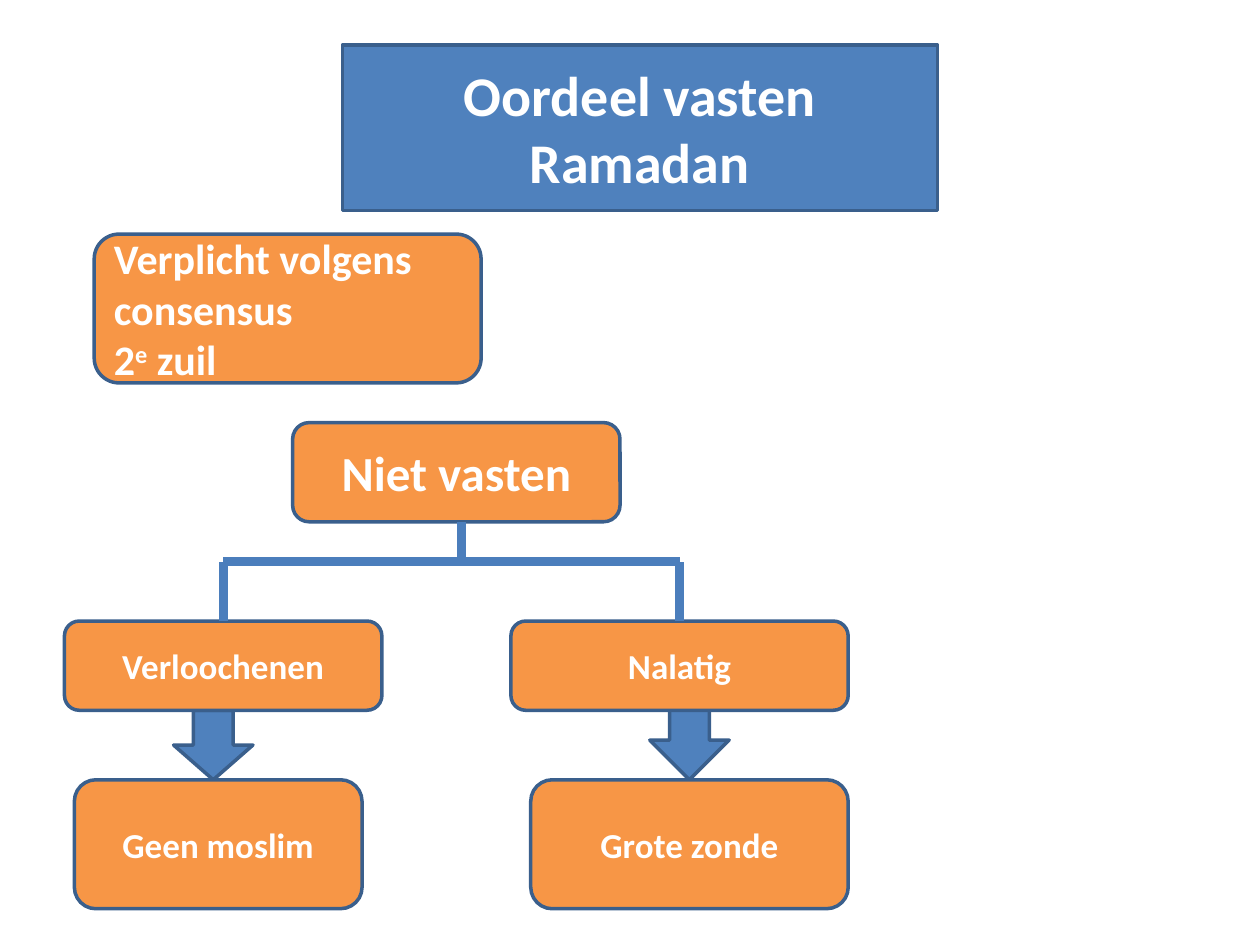
from lxml.etree import SubElement
from pptx import Presentation
from pptx.dml.color import RGBColor
from pptx.enum.shapes import MSO_CONNECTOR as Link, MSO_SHAPE as Shape
from pptx.enum.text import MSO_ANCHOR as Anchor, MSO_AUTO_SIZE as AutoSize, PP_ALIGN as Align
from pptx.oxml.ns import qn
from pptx.util import Cm, Pt

BLUE = RGBColor(0x4F, 0x81, 0xBD)
ORANGE = RGBColor(0xF7, 0x96, 0x46)
OUTLINE = RGBColor(0x3A, 0x5F, 0x8C)
BRANCH = RGBColor(0x4B, 0x7E, 0xBC)
WHITE = RGBColor(0xFF, 0xFF, 0xFF)

FRAME = {"word_wrap": True, "auto_size": AutoSize.NONE, "vertical_anchor": Anchor.MIDDLE}


def paint(box, fill):
    box.shadow.inherit = False
    box.fill.solid()
    box.fill.fore_color.rgb = fill
    box.line.color.rgb = OUTLINE
    box.line.width = Pt(2)


def write(box, paragraphs, size, align=Align.CENTER):
    """Fill the box with paragraphs, each a list of (text, baseline) spans."""
    frame = box.text_frame
    for name, value in FRAME.items():
        setattr(frame, name, value)
    for index, spans in enumerate(paragraphs):
        para = frame.add_paragraph() if index else frame.paragraphs[0]
        para.alignment = align
        for text, baseline in spans:
            span = para.add_run()
            span.text = text
            for name, value in {"name": "Calibri", "size": Pt(size), "bold": True}.items():
                setattr(span.font, name, value)
            span.font.color.rgb = WHITE
            if baseline:
                span.font._element.set("baseline", str(baseline * 1000))


deck = Presentation()
deck.slide_width, deck.slide_height = Cm(25.4), Cm(19.05)
page = deck.slides.add_slide(deck.slide_layouts[5])

# Title, as a rounded rectangle
title = page.shapes.title
for name, value in {"left": 6.9, "top": 0.91, "width": 12, "height": 3.33}.items():
    setattr(title, name, Cm(value))
geometry = SubElement(title._element.spPr, qn("a:prstGeom"), prst="roundRect")
SubElement(geometry, qn("a:avLst"))
paint(title, BLUE)
write(title, [[("Oordeel vasten Ramadan", 0)]], 32)

# Arrows from each kind of not fasting to its consequence
for left, top, height in [(3.5, 14.32, 1.4), (13.1, 14.12, 1.6)]:
    arrow = page.shapes.add_shape(Shape.DOWN_ARROW, Cm(left), Cm(top), Cm(1.6), Cm(height))
    paint(arrow, BLUE)

# Boxes of the tree
TREE = [
    ("Verloochenen", 20, 1.3, 12.52, 6.4, 1.8),
    ("Geen moslim", 20, 1.5, 15.72, 5.8, 2.6),
    ("Grote zonde", 20, 10.7, 15.72, 6.4, 2.6),
    ("Nalatig", 20, 10.3, 12.52, 6.8, 1.8),
    ("Niet vasten", 28, 5.9, 8.52, 6.6, 2),
]
boxes = {}
for label, size, *place in TREE:
    box = page.shapes.add_shape(Shape.ROUNDED_RECTANGLE, *map(Cm, place))
    paint(box, ORANGE)
    write(box, [[(label, 0)]], size)
    boxes[label] = box

# Ruling
ruling = page.shapes.add_shape(Shape.ROUNDED_RECTANGLE, Cm(1.9), Cm(4.72), Cm(7.8), Cm(3))
paint(ruling, ORANGE)
write(ruling, [[("Verplicht volgens consensus", 0)],
               [("2", 0), ("e", 30), (" zuil", 0)]], 24, Align.LEFT)

# Branches: crossbar, stem, then one drop to each child
LEFT, RIGHT, STEM, BAR = 4.5, 13.7, 9.3, 11.32
BRANCHES = [
    (LEFT, BAR, RIGHT, BAR, None),
    (STEM, BAR, STEM, 10.52, None),
    (LEFT, 12.52, LEFT, BAR, "Verloochenen"),
    (RIGHT, 12.52, RIGHT, BAR, "Nalatig"),
]
for *ends, child in BRANCHES:
    branch = page.shapes.add_connector(Link.STRAIGHT, *map(Cm, ends))
    branch.line.color.rgb = BRANCH
    branch.line.width = Pt(5)
    SubElement(branch._element.spPr, qn("a:effectLst"))
    if child:
        branch.begin_connect(boxes[child], 0)

deck.save("out.pptx")
